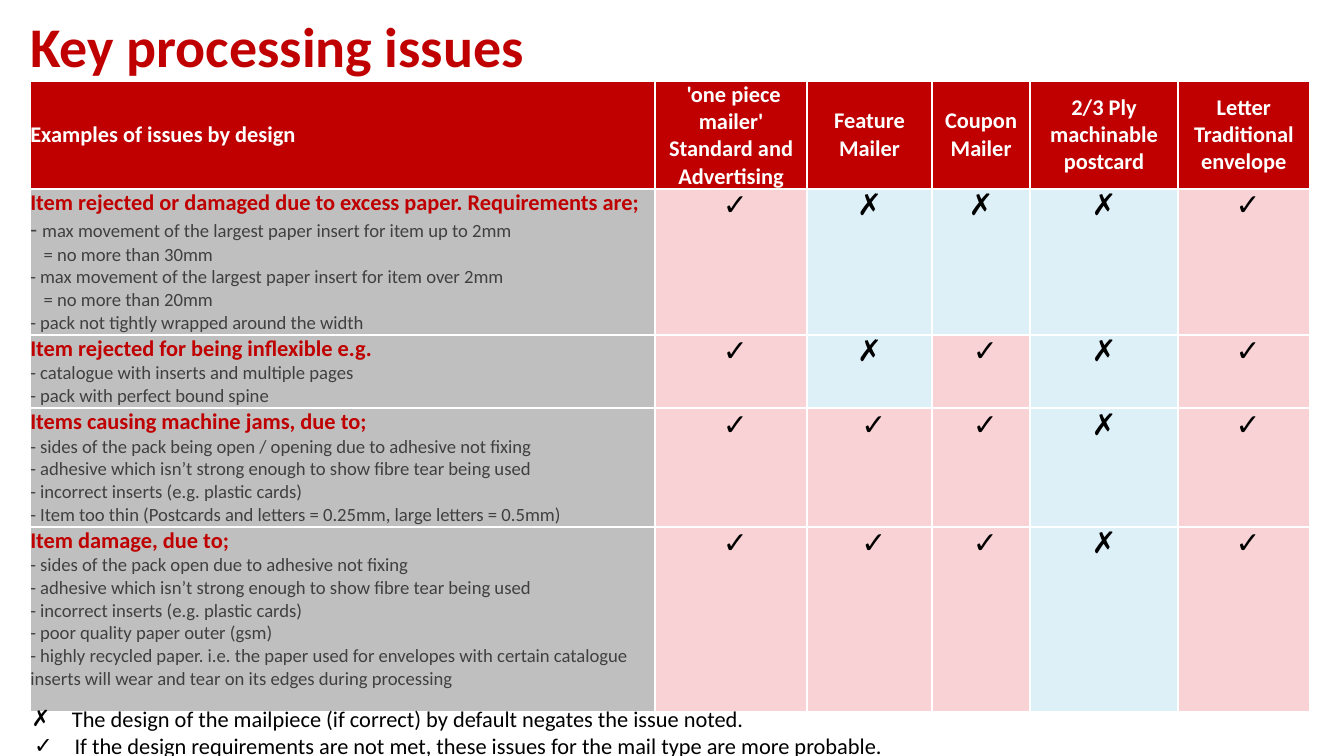
from lxml.etree import SubElement
from pptx import Presentation
from pptx.dml.color import RGBColor
from pptx.enum.text import MSO_ANCHOR, PP_ALIGN
from pptx.oxml.ns import qn
from pptx.util import Inches, Pt

W = Inches(10)
H = W * 9 // 16
RED = RGBColor(0xC0, 0x00, 0x00)
WHITE = RGBColor(0xFF, 0xFF, 0xFF)
BLACK = RGBColor(0x00, 0x00, 0x00)
DARK = RGBColor(0x40, 0x40, 0x40)
GREY = RGBColor(0xBF, 0xBF, 0xBF)
PINK = RGBColor(0xF8, 0xD2, 0xD4)
BLUE = RGBColor(0xDD, 0xF0, 0xF7)

TITLE = dict(name="Calibri", size=Pt(30), bold=True, color=RED)
HEADER = dict(name="Calibri", size=Pt(12), bold=True, color=WHITE)
ISSUE = dict(HEADER, color=RED)
DETAIL = dict(name="Calibri", size=Pt(10), bold=False, color=DARK)
FIRST_DASH = dict(DETAIL, size=Pt(12))
MARK = dict(name="Arial", size=Pt(16), bold=False, color=BLACK)
LEGEND = dict(name="Calibri", size=Pt(12), bold=False, color=BLACK)

LEFT = 2.25
COLUMNS = [46.5, 11.3, 9.3, 7.3, 11, 9.8]
ROWS = [14.3, 19.3, 9.7, 15.7, 24.5]
HEADINGS = [
    "Examples of issues by design",
    " 'one piece mailer'\vStandard and Advertising",
    "Feature Mailer",
    "Coupon Mailer",
    "2/3 Ply machinable postcard",
    "Letter Traditional envelope",
]
ISSUES = [
    ("Item rejected or damaged due to excess paper. Requirements are;", "✓✗✗✗✓", [
        "- max movement of the largest paper insert for item up to 2mm",
        "= no more than 30mm\v"
        "- max movement of the largest paper insert for item over 2mm",
        "= no more than 20mm\v"
        "- pack not tightly wrapped around the width",
    ]),
    ("Item rejected for being inflexible e.g.", "✓✗✓✗✓", [
        "- catalogue with inserts and multiple pages\v"
        "- pack with perfect bound spine",
    ]),
    ("Items causing machine jams, due to;", "✓✓✓✗✓", [
        "- sides of the pack being open / opening due to adhesive not fixing\v"
        "- adhesive which isn’t strong enough to show fibre tear being used\v"
        "- incorrect inserts (e.g. plastic cards)",
        "- Item too thin (Postcards and letters = 0.25mm, large letters = 0.5mm)",
    ]),
    ("Item damage, due to;", "✓✓✓✗✓", [
        "- sides of the pack open due to adhesive not fixing\v"
        "- adhesive which isn’t strong enough to show fibre tear being used\v"
        "- incorrect inserts (e.g. plastic cards)\v"
        "- poor quality paper outer (gsm)",
        "- highly recycled paper. i.e. the paper used for envelopes with certain "
        "catalogue inserts will wear and tear on its edges during processing",
    ]),
]
LEGEND_LINES = [
    ("✗", 0.31, "The design of the mailpiece (if correct) by default negates the issue noted."),
    ("✓", 0.33, "If the design requirements are not met, these issues for the mail type "
                "are more probable."),
]


def across(share):
    return round(W * share / 100)


def down(share):
    return round(H * share / 100)


def set_attributes(obj, values):
    for key, value in values.items():
        setattr(obj, key, value)


def add_run(p, text, style):
    for i, part in enumerate(text.split("\v")):
        if i:
            p.add_line_break()
        if part:
            r = p.add_run()
            r.text = part
            set_attributes(r.font, {k: v for k, v in style.items() if k != "color"})
            r.font.color.rgb = style["color"]


def set_indent(p, left, first):
    pPr = p._p.get_or_add_pPr()
    pPr.set("marL", str(Inches(left)))
    pPr.set("indent", str(Inches(first)))
    return pPr


def add_bullet(p, char, left):
    pPr = set_indent(p, left, -0.3)
    SubElement(pPr, qn("a:buFont"), typeface="Arial")
    SubElement(pPr, qn("a:buChar"), char=char)


def add_text_box(s, left, top, width, height):
    tf = s.shapes.add_textbox(across(left), down(top), across(width), down(height)).text_frame
    set_attributes(tf, dict(word_wrap=True, vertical_anchor=MSO_ANCHOR.TOP, margin_left=0,
                            margin_right=0, margin_top=0, margin_bottom=0))
    return tf


def format_cell(cell, fill, anchor):
    set_attributes(cell, dict(margin_left=0, margin_right=0, margin_top=0,
                              margin_bottom=0, vertical_anchor=anchor))
    tcPr = cell._tc.get_or_add_tcPr()
    for side, width in dict(lnL=1, lnR=1, lnT=1.5, lnB=1.5).items():
        ln = SubElement(tcPr, qn(f"a:{side}"), w=str(Pt(width)))
        SubElement(SubElement(ln, qn("a:solidFill")), qn("a:srgbClr"), val=str(WHITE))
    cell.fill.solid()
    cell.fill.fore_color.rgb = fill


def fill_heading(cell, text, align):
    format_cell(cell, RED, MSO_ANCHOR.MIDDLE)
    p = cell.text_frame.paragraphs[0]
    p.alignment = align
    add_run(p, text, HEADER)


def fill_issue(cell, issue, details, first_style):
    format_cell(cell, GREY, MSO_ANCHOR.TOP)
    tf = cell.text_frame
    p = tf.paragraphs[0]
    add_run(p, issue + "\v", ISSUE)
    add_run(p, details[0][:2], first_style)
    add_run(p, details[0][2:], DETAIL)
    for text in details[1:]:
        p = tf.add_paragraph()
        if text.startswith("="):
            set_indent(p, 0, 0.1)
        add_run(p, text, DETAIL)


def fill_mark(cell, mark):
    likely = mark == "✓"
    format_cell(cell, PINK if likely else BLUE, MSO_ANCHOR.TOP)
    p = cell.text_frame.paragraphs[0]
    p.alignment = PP_ALIGN.CENTER
    add_run(p, f" {mark}" if likely else mark, MARK)


def add_issue_table(s):
    table = s.shapes.add_table(len(ROWS), len(COLUMNS), across(LEFT), down(10.7),
                               across(sum(COLUMNS)), down(sum(ROWS))).table
    set_attributes(table, dict(first_row=True, horz_banding=False))
    for column, share in zip(table.columns, COLUMNS):
        column.width = across(share)
    for row, share in zip(table.rows, ROWS):
        row.height = down(share)
    for c, text in enumerate(HEADINGS):
        fill_heading(table.cell(0, c), text, PP_ALIGN.CENTER if c else PP_ALIGN.LEFT)
    for r, (issue, marks, details) in enumerate(ISSUES, 1):
        fill_issue(table.cell(r, 0), issue, details, FIRST_DASH if r == 1 else DETAIL)
        for c, mark in enumerate(marks, 1):
            fill_mark(table.cell(r, c), mark)


def add_title(s):
    p = add_text_box(s, LEFT, 3.2, 97.75, 8.7).paragraphs[0]
    p.line_spacing = 0.8
    add_run(p, "Key processing issues", TITLE)


def add_legend(s):
    tf = add_text_box(s, LEFT, 93.3, 70.4, 6.7)
    for i, (mark, left, text) in enumerate(LEGEND_LINES):
        p = tf.add_paragraph() if i else tf.paragraphs[0]
        add_bullet(p, mark, left)
        add_run(p, text, LEGEND)


def main():
    prs = Presentation()
    set_attributes(prs, dict(slide_width=W, slide_height=H))
    s = prs.slides.add_slide(prs.slide_layouts[6])
    add_title(s)
    add_issue_table(s)
    add_legend(s)
    prs.save("out.pptx")


if __name__ == "__main__":
    main()
